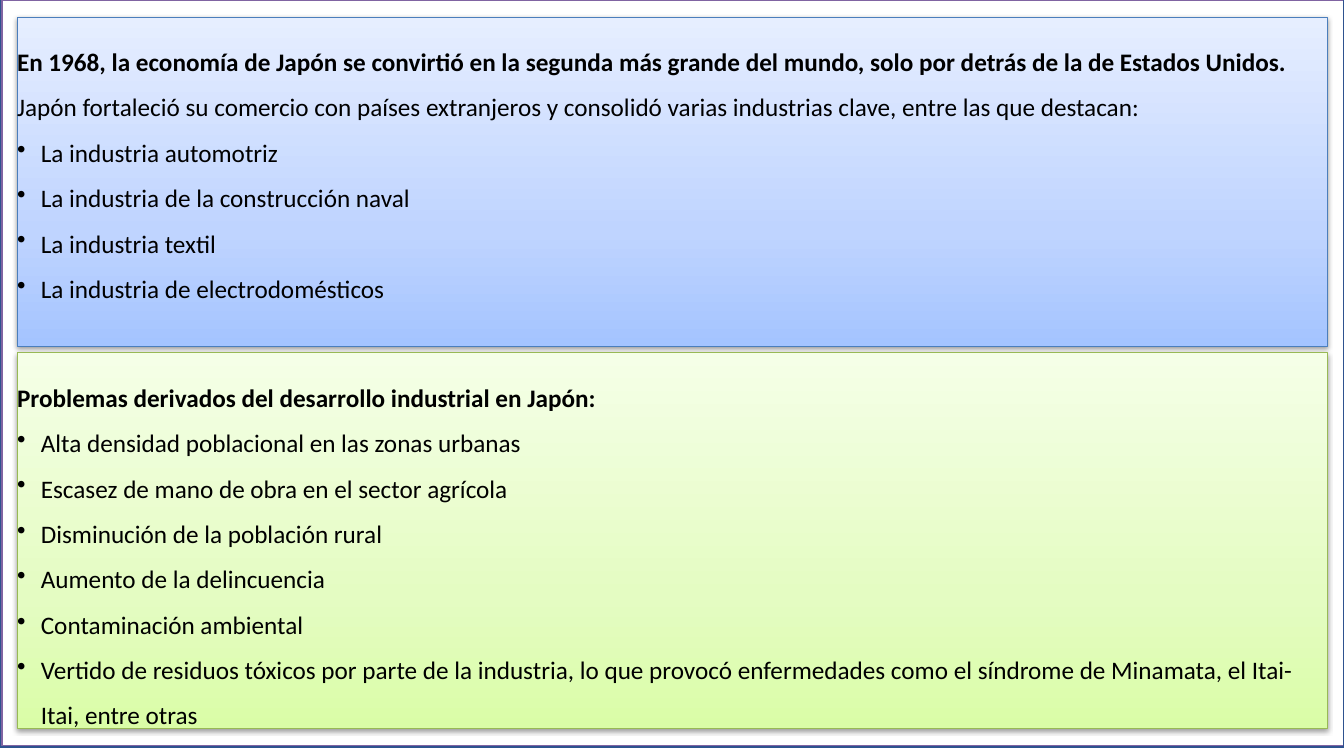
import copy
import pptx
import pptx.util
import pptx.dml.color
import pptx.enum.shapes
import pptx.enum.text
import pptx.oxml
import pptx.oxml.ns
from pptx.util import Cm

theme = {
    "font": "Calibri",
    "size": 18,
    "text": "000000",
    "white": "FFFFFF",
    "purple": "8064A2",
    "navy": "2E528F",
    "blue": {"line": "4B7EBC", "stops": ["A4C4FF", "BFD4FF", "E6EEFF"]},
    "green": {"line": "98B955", "stops": ["DAFDA7", "E4FCC2", "F5FFE7"]},
}

panels = [
    ("blue", 0.43, 8.31,
     ["En 1968, la economía de Japón se convirtió en la segunda más grande del mundo, solo por detrás de la de Estados Unidos.",
      "Japón fortaleció su comercio con países extranjeros y consolidó varias industrias clave, entre las que destacan:"],
     ["La industria automotriz",
      "La industria de la construcción naval",
      "La industria textil",
      "La industria de electrodomésticos"]),
    ("green", 8.89, 9.47,
     ["Problemas derivados del desarrollo industrial en Japón:"],
     ["Alta densidad poblacional en las zonas urbanas",
      "Escasez de mano de obra en el sector agrícola",
      "Disminución de la población rural",
      "Aumento de la delincuencia",
      "Contaminación ambiental",
      "Vertido de residuos tóxicos por parte de la industria, lo que provocó enfermedades como el síndrome de Minamata, el Itai-Itai, entre otras"]),
]


def color(code):
    return pptx.dml.color.RGBColor.from_string(code)


def write(para, text, bold):
    run = para.add_run()
    run.text = text
    run.font.name = theme["font"]
    run.font.size = pptx.util.Pt(theme["size"])
    run.font.bold = bold
    run.font.color.rgb = color(theme["text"])


deck = pptx.Presentation()
deck.slide_width = Cm(33.87)
deck.slide_height = Cm(19.05)
slide = deck.slides.add_slide(deck.slide_layouts[6])

for left, closed, tone, width in [(0.05, True, "purple", 2), (0, False, "navy", 0.96)]:
    right = left + 33.87
    pen = slide.shapes.build_freeform(Cm(left), Cm(0))
    pen.add_line_segments(
        [(Cm(left), Cm(18.82)), (Cm(right), Cm(18.82)), (Cm(right), Cm(0))], close=closed)
    frame = pen.convert_to_shape()
    frame.shadow.inherit = False
    if closed:
        frame.fill.solid()
        frame.fill.fore_color.rgb = color(theme["white"])
    else:
        frame.fill.background()
    frame.line.color.rgb = color(theme[tone])
    frame.line.width = pptx.util.Pt(width)

for tone, top, height, intro, items in panels:
    panel = slide.shapes.add_shape(
        pptx.enum.shapes.MSO_SHAPE.RECTANGLE, Cm(0.43), Cm(top), Cm(33.02), Cm(height))
    panel.line.color.rgb = color(theme[tone]["line"])
    panel.line.width = pptx.util.Pt(0.75)

    panel.fill.gradient()
    panel.fill.gradient_angle = 90
    stops = panel._element.spPr.find(".//" + pptx.oxml.ns.qn("a:gsLst"))
    stops.insert(1, copy.deepcopy(stops[0]))
    for stop, place, code in zip(panel.fill.gradient_stops, [0, 0.35, 1], theme[tone]["stops"]):
        stop.position = place
        stop.color.rgb = color(code)

    panel.shadow.inherit = False
    effects = panel._element.spPr.find(pptx.oxml.ns.qn("a:effectLst"))
    effects.append(pptx.oxml.parse_xml(
        f'<a:outerShdw {pptx.oxml.ns.nsdecls("a")} blurRad="40000" dist="20000" dir="5400000" '
        'rotWithShape="0"><a:srgbClr val="000000"><a:alpha val="38000"/></a:srgbClr></a:outerShdw>'))

    body = panel.text_frame
    body.word_wrap = True
    body.auto_size = pptx.enum.text.MSO_AUTO_SIZE.SHAPE_TO_FIT_TEXT
    body.vertical_anchor = pptx.enum.text.MSO_ANCHOR.TOP
    body.margin_left = body.margin_right = body.margin_bottom = 0
    body.margin_top = Cm(0.36)

    head = body.paragraphs[0]
    for place, text in enumerate(intro):
        if place:
            head.add_line_break()
        write(head, text, place == 0)
    for text in items:
        para = body.add_paragraph()
        write(para, text, False)
        props = para._p.get_or_add_pPr()
        props.set("marL", str(Cm(0.6)))
        props.set("indent", str(-Cm(0.6)))
        props.append(pptx.oxml.parse_xml(
            f'<a:buChar {pptx.oxml.ns.nsdecls("a")} char="•"/>'))
    for para in body.paragraphs:
        para.alignment = pptx.enum.text.PP_ALIGN.LEFT
        para.line_spacing = 1.5

deck.save("out.pptx")
